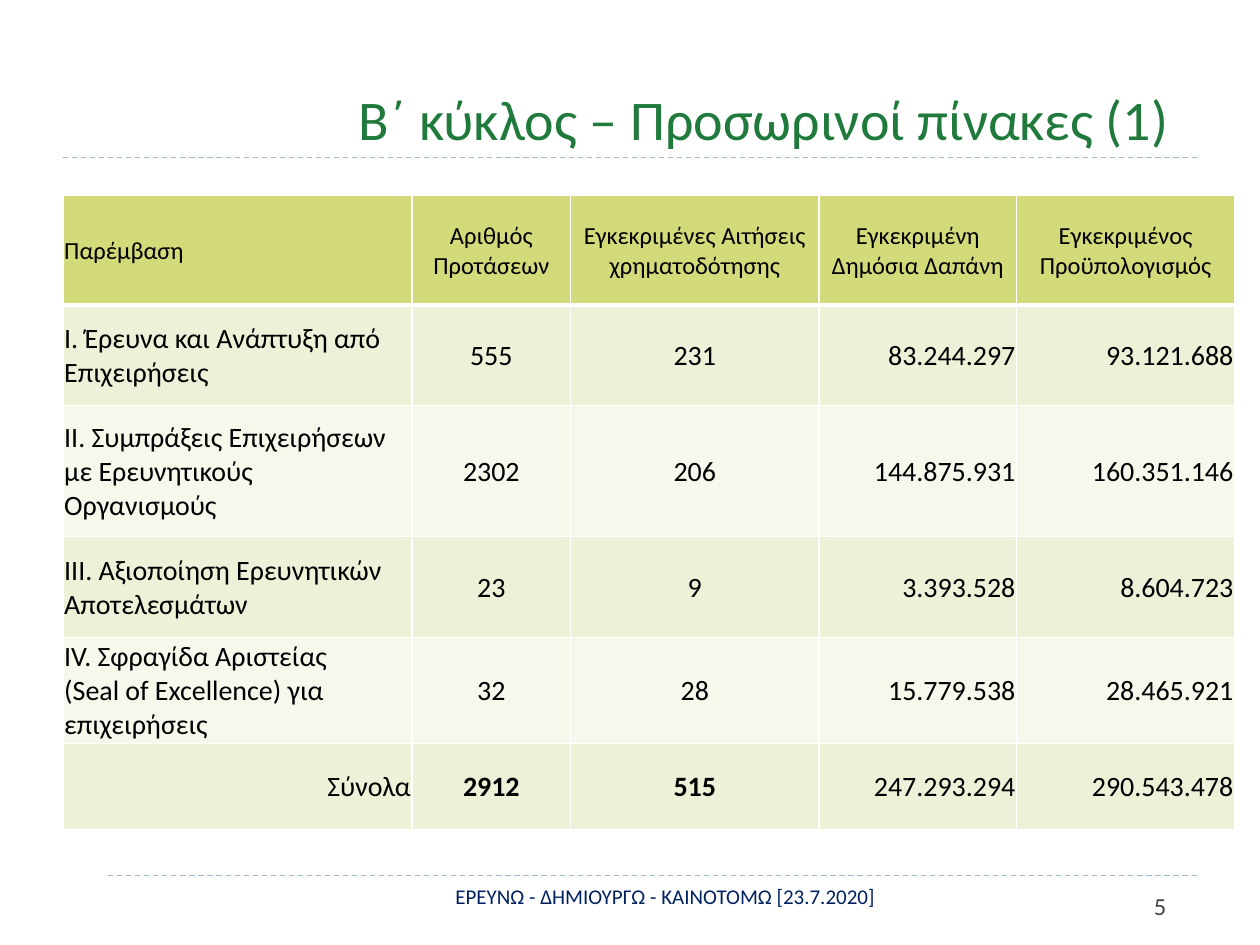
from lxml import etree
from pptx import Presentation
from pptx.dml.color import RGBColor
from pptx.enum.dml import MSO_LINE
from pptx.enum.shapes import MSO_CONNECTOR, MSO_SHAPE
from pptx.enum.text import MSO_ANCHOR, PP_ALIGN
from pptx.oxml.ns import qn
from pptx.util import Inches, Pt

LEFT, CENTER, RIGHT = PP_ALIGN.LEFT, PP_ALIGN.CENTER, PP_ALIGN.RIGHT
TOP, MIDDLE, BOTTOM = MSO_ANCHOR.TOP, MSO_ANCHOR.MIDDLE, MSO_ANCHOR.BOTTOM
DASH, STRAIGHT, RECTANGLE = MSO_LINE.DASH, MSO_CONNECTOR.STRAIGHT, MSO_SHAPE.RECTANGLE

THEME = {
    "font": "Calibri",
    "white": "FFFFFF", "rule": "9FB8CD", "ink": "000000",
    "header": "D2DA7A", "bands": ("EEF1D7", "F7F8EC"),
    "title": {"size": 32, "color": "207A3C"},
    "footer": {"size": 12, "color": "002060"},
    "number": {"size": 14, "color": "464653"},
    "header_size": 14, "body_size": 16,
}

TEXTS = [
    {"text": "Β΄ κύκλος – Προσωρινοί πίνακες (1)", "at": (1.22, 0.17, 8.28, 1.08),
     "style": "title", "align": RIGHT, "anchor": BOTTOM, "margin_right": 0.22},
    {"text": "ΕΡΕΥΝΩ - ΔΗΜΙΟΥΡΓΩ - ΚΑΙΝΟΤΟΜΩ [23.7.2020]", "at": (2.17, 6.96, 6.22, 0.41),
     "style": "footer", "align": CENTER, "anchor": TOP, "margin_right": 0.1},
    {"text": "5", "at": (9.06, 7.02, 0.5, 0.4),
     "style": "number", "align": LEFT, "anchor": TOP, "margin_right": 0.1},
]

HEADER = ["Παρέμβαση", "Αριθμός\nΠροτάσεων", "Εγκεκριμένες Αιτήσεις χρηματοδότησης",
          "Εγκεκριμένη Δημόσια Δαπάνη", "Εγκεκριμένος Προϋπολογισμός"]
ROWS = [
    ["I. Έρευνα και Ανάπτυξη από Επιχειρήσεις", "555", "231", "83.244.297", "93.121.688"],
    ["II. Συμπράξεις Επιχειρήσεων με Ερευνητικούς Οργανισμούς",
     "2302", "206", "144.875.931", "160.351.146"],
    ["III. Αξιοποίηση Ερευνητικών Αποτελεσμάτων", "23", "9", "3.393.528", "8.604.723"],
    ["IV. Σφραγίδα Αριστείας\n(Seal of Excellence) για επιχειρήσεις",
     "32", "28", "15.779.538", "28.465.921"],
    ["Σύνολα", "2912", "515", "247.293.294", "290.543.478"],
]
COLUMN_WIDTHS = [2.77, 1.26, 1.97, 1.57, 1.73]
ROW_HEIGHTS = [0.87, 0.8, 1.04, 0.8, 0.84, 0.69]
HEADER_ALIGN = [LEFT] + [CENTER] * 4
BODY_ALIGN = [LEFT, CENTER, CENTER, RIGHT, RIGHT]
TOTAL_ALIGN = [RIGHT] + BODY_ALIGN[1:]
TABLE_LEFT, TABLE_TOP = 0.5, 1.55
RULE_LEFT, RULE_RIGHT, RULE_TOPS = 0.5, 9.5, (6.95, 1.25)
CORNER = (0.43, 6.85, 0.43, 0.44)


def color(value):
    return RGBColor.from_string(value)


def set_values(target, values):
    for name, value in values.items():
        setattr(target, name, value)


def write(frame, text, size, ink, align, bold=False):
    for index, line in enumerate(text.split("\n")):
        para = frame.add_paragraph() if index else frame.paragraphs[0]
        para.alignment = align
        span = para.add_run()
        span.text = line
        set_values(span.font, {"name": THEME["font"], "size": Pt(size), "bold": bold})
        span.font.color.rgb = color(ink)


def add_rule(page, top):
    rule = page.shapes.add_connector(
        STRAIGHT, Inches(RULE_LEFT), Inches(top), Inches(RULE_RIGHT), Inches(top))
    set_values(rule.line, {"width": Pt(0.75), "dash_style": DASH})
    rule.line.color.rgb = color(THEME["rule"])
    etree.SubElement(rule.element.spPr, qn("a:effectLst"))


def add_corner(page):
    corner = page.shapes.add_shape(RECTANGLE, *map(Inches, CORNER))
    corner.shadow.inherit = False
    corner.fill.solid()
    corner.fill.fore_color.rgb = color(THEME["white"])
    corner.line.fill.background()


def add_text(page, item):
    box = page.shapes.add_textbox(*map(Inches, item["at"]))
    set_values(box.text_frame, {
        "word_wrap": True, "vertical_anchor": item["anchor"],
        "margin_right": Inches(item["margin_right"])})
    style = THEME[item["style"]]
    write(box.text_frame, item["text"], style["size"], style["color"], item["align"])


def add_borders(cell, bottom_width):
    properties = cell._tc.get_or_add_tcPr()
    widths = {"a:lnL": 1, "a:lnR": 1, "a:lnT": 1, "a:lnB": bottom_width}
    for index, (tag, width) in enumerate(widths.items()):
        border = etree.Element(qn(tag), w=str(Pt(width)))
        fill = etree.SubElement(border, qn("a:solidFill"))
        etree.SubElement(fill, qn("a:srgbClr"), val=THEME["white"])
        properties.insert(index, border)


def add_results(page):
    rows = [HEADER] + ROWS
    table = page.shapes.add_table(
        len(rows), len(HEADER), Inches(TABLE_LEFT), Inches(TABLE_TOP),
        Inches(sum(COLUMN_WIDTHS)), Inches(sum(ROW_HEIGHTS))).table
    for column, width in zip(table.columns, COLUMN_WIDTHS):
        column.width = Inches(width)
    for row, height in zip(table.rows, ROW_HEIGHTS):
        row.height = Inches(height)
    aligns = [HEADER_ALIGN] + [BODY_ALIGN] * (len(ROWS) - 1) + [TOTAL_ALIGN]
    for r, values in enumerate(rows):
        is_header, is_total = r == 0, r == len(ROWS)
        size = THEME["header_size" if is_header else "body_size"]
        for c, text in enumerate(values):
            cell = table.cell(r, c)
            set_values(cell, {
                "vertical_anchor": MIDDLE, "margin_left": Inches(0.01),
                "margin_top": Inches(0.01), "margin_right": Inches(0.01),
                "margin_bottom": 0})
            cell.fill.solid()
            cell.fill.fore_color.rgb = color(
                THEME["header"] if is_header else THEME["bands"][(r - 1) % 2])
            add_borders(cell, 3 if is_header else 1)
            write(cell.text_frame, text, size, THEME["ink"], aligns[r][c],
                  is_total and c in (1, 2))


def main():
    """Build the slide of provisional second-round results."""
    deck = Presentation()
    set_values(deck, {"slide_width": Inches(10), "slide_height": Inches(7.5)})
    page = deck.slides.add_slide(deck.slide_layouts[6])
    for top in RULE_TOPS:
        add_rule(page, top)
    add_corner(page)
    for item in TEXTS:
        add_text(page, item)
    add_results(page)
    deck.save("out.pptx")


if __name__ == "__main__":
    main()
